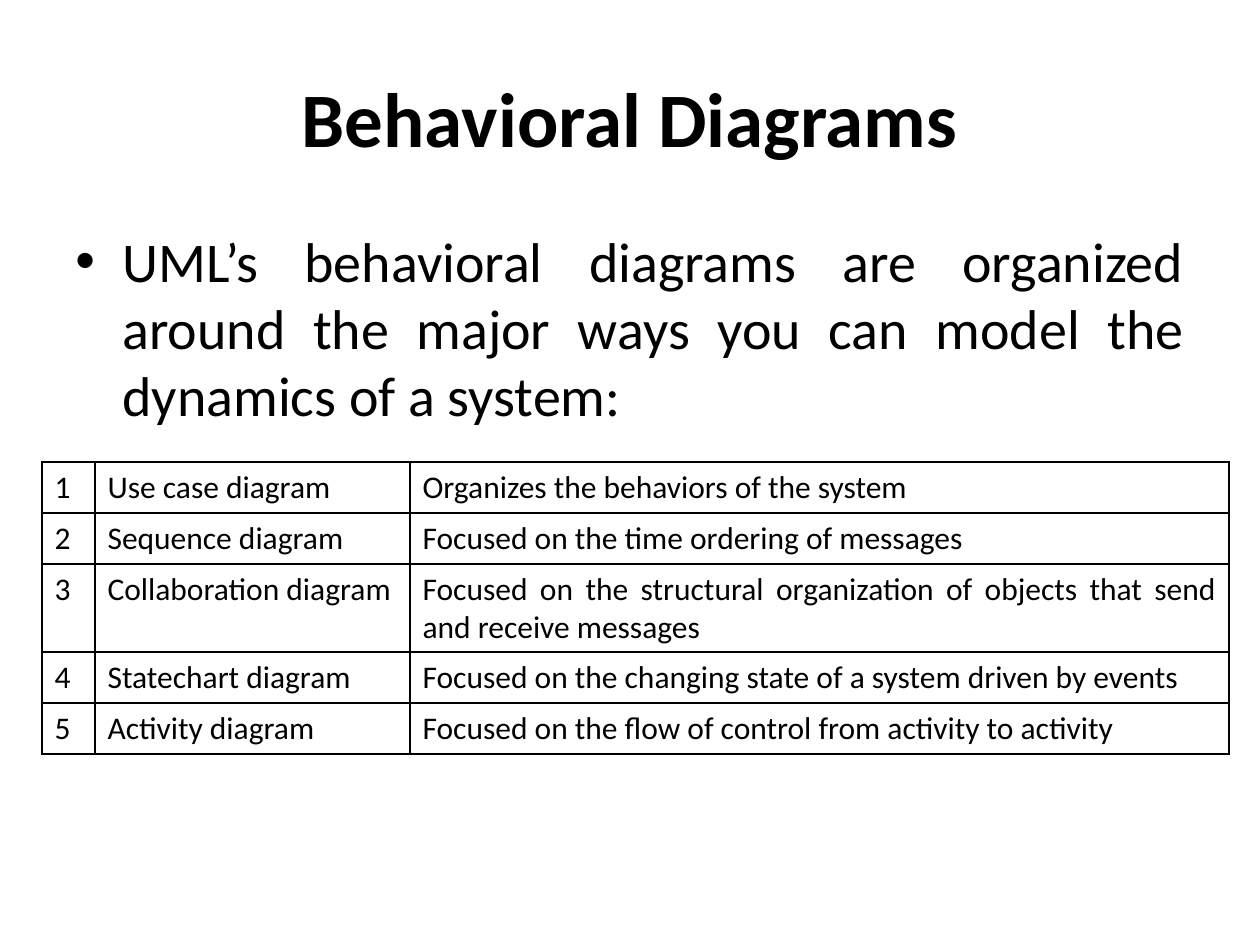
from dataclasses import dataclass

from lxml.etree import SubElement
from pptx import Presentation
from pptx.dml.color import RGBColor
from pptx.enum.text import MSO_ANCHOR as Anchor, PP_ALIGN as Align
from pptx.oxml.ns import qn
from pptx.util import Pt

EMU_PER_PX = 914400 / 126


@dataclass(frozen=True)
class Theme:
    font: str = "Calibri"
    ink: str = "000000"
    paper: str = "FFFFFF"
    title_size: int = 44
    body_size: int = 32
    table_size: int = 18
    border_width: int = 1


def px(length):
    return round(length * EMU_PER_PX)


def write_text(frame, text, *, theme, size, bold=False, align=Align.LEFT, anchor=Anchor.TOP):
    frame.word_wrap = True
    frame.vertical_anchor = anchor
    para = frame.paragraphs[0]
    para.alignment = align
    span = para.add_run()
    span.text = text
    span.font.name = theme.font
    span.font.size = Pt(size)
    span.font.bold = bold
    span.font.color.rgb = RGBColor.from_string(theme.ink)
    return para


class SlideBuilder:
    """Adds titles, bullets and tables to a page in one theme."""

    def __init__(self, page, theme):
        self.page = page
        self.theme = theme
        page.background.fill.solid()
        page.background.fill.fore_color.rgb = RGBColor.from_string(theme.paper)

    def text_box(self, bounds, text, **style):
        box = self.page.shapes.add_textbox(*map(px, bounds))
        return write_text(box.text_frame, text, theme=self.theme, **style)

    def title(self, bounds, text):
        self.text_box(bounds, text, size=self.theme.title_size, bold=True,
                      align=Align.CENTER, anchor=Anchor.MIDDLE)

    def bullet(self, bounds, text, indent):
        para = self.text_box(bounds, text, size=self.theme.body_size, align=Align.JUSTIFY)
        para.space_before = Pt(self.theme.body_size * 0.2)
        properties = para._p.get_or_add_pPr()
        properties.set("marL", str(px(indent)))
        properties.set("indent", str(-px(indent)))
        SubElement(properties, qn("a:buFont"), typeface="Arial")
        SubElement(properties, qn("a:buChar"), char="•")

    def border(self, cell):
        properties = cell._tc.get_or_add_tcPr()
        for side in ("lnL", "lnR", "lnT", "lnB"):
            line = SubElement(properties, qn(f"a:{side}"), w=str(Pt(self.theme.border_width)))
            fill = SubElement(line, qn("a:solidFill"))
            SubElement(fill, qn("a:srgbClr"), val=self.theme.ink)

    def table(self, left, top, widths, row_height, rows):
        bounds = (left, top, sum(widths), row_height * len(rows))
        table = self.page.shapes.add_table(len(rows), len(widths), *map(px, bounds)).table
        table.first_row = table.horz_banding = False
        for column, width in zip(table.columns, widths):
            column.width = px(width)
        for row, texts in zip(table.rows, rows):
            row.height = px(row_height)
            for index, (cell, text) in enumerate(zip(row.cells, texts)):
                self.border(cell)
                cell.fill.background()
                write_text(cell.text_frame, text, theme=self.theme, size=self.theme.table_size,
                           align=Align.JUSTIFY if index else Align.LEFT)


DIAGRAMS = [
    ("Use case diagram", "Organizes the behaviors of the system"),
    ("Sequence diagram", "Focused on the time ordering of messages"),
    ("Collaboration diagram",
     "Focused on the structural organization of objects that send and receive messages"),
    ("Statechart diagram", "Focused on the changing state of a system driven by events"),
    ("Activity diagram", "Focused on the flow of control from activity to activity"),
]


def main():
    deck = Presentation()
    deck.slide_width, deck.slide_height = px(1260), px(945)
    slide = SlideBuilder(deck.slides.add_slide(deck.slide_layouts[6]), Theme())
    slide.title((63, 38, 1134, 158), "Behavioral Diagrams")
    slide.bullet((63, 220, 1134, 624),
                 "UML’s behavioral diagrams are organized around the major ways "
                 "you can model the dynamics of a system:", indent=47)
    slide.table(42, 462, (53, 315, 819), 51,
                [(str(number), *texts) for number, texts in enumerate(DIAGRAMS, 1)])
    deck.save("out.pptx")


if __name__ == "__main__":
    main()
